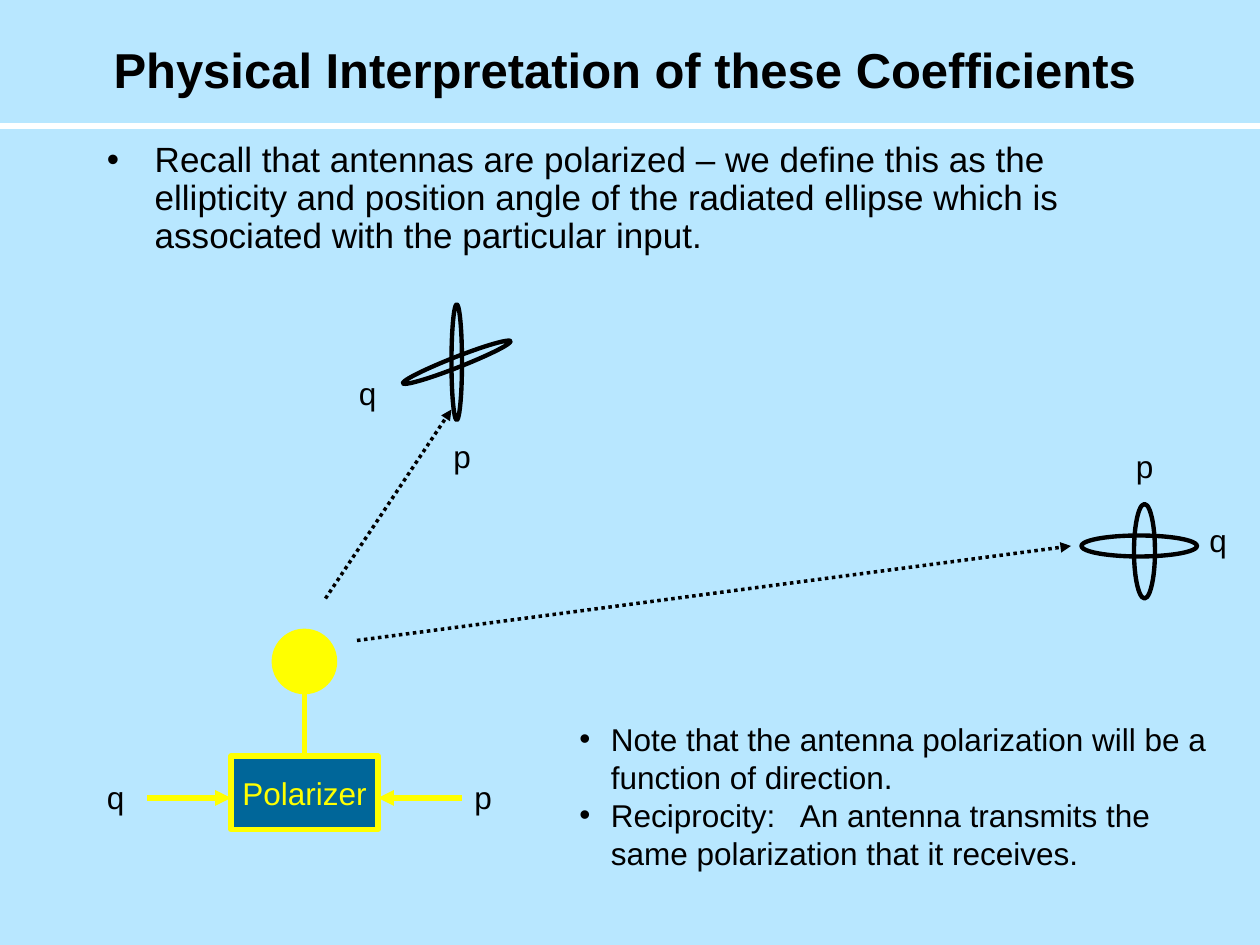
import pptx
import pptx.util
import pptx.dml.color
import pptx.enum.dml
import pptx.enum.shapes
import pptx.enum.text
import pptx.oxml.ns
import lxml.etree

HUE = {"sky": "B8E7FF", "white": "FFFFFF", "black": "000000",
       "sun": "FFFF00", "sea": "006699"}
FONT = "Arial"
WIDE, HIGH = 10, 7.5
COLS = 120
CELL = WIDE / COLS

TITLE = "Physical Interpretation of these Coefficients"
RECALL = ["Recall that antennas are polarized – we define this as the "
          "ellipticity and position angle of the radiated ellipse which is "
          "associated with the particular input."]
NOTES = ["Note that the antenna polarization will be a function of direction.",
         "Reciprocity:   An antenna transmits the same polarization that it receives."]
LABELS = [("q", 9, 73.5), ("p", 44, 73.5), ("p", 107, 42),
          ("p", 42, 41), ("q", 114, 49), ("q", 33, 35)]
RINGS = [((108, 48, 2, 9), 0), ((103, 51, 11, 2), 0),
         ((38, 34, 11, 1), 338.6), ((38, 34, 11, 1), 90)]
LINES = [((0, 12), (COLS, 12), "white", 3, None),
         ((29, 66), (29, 72), "sun", 3, None),
         ((36, 76), (44, 76), "sun", 3, "headEnd"),
         ((22, 76), (14, 76), "sun", 3, "headEnd"),
         ((34, 61), (102, 52), "black", 2, "tailEnd"),
         ((31, 57), (43, 39), "black", 2, "tailEnd")]

KIND = pptx.enum.shapes.MSO_SHAPE
SIDE = pptx.enum.text.PP_ALIGN
EDGE = pptx.enum.text.MSO_ANCHOR

deck = pptx.Presentation()
deck.slide_width = pptx.util.Inches(WIDE)
deck.slide_height = pptx.util.Inches(HIGH)
slide = deck.slides.add_slide(deck.slide_layouts[6])


def grid(*cells):
    return [pptx.util.Inches(n * CELL) for n in cells]


def tint(name):
    return pptx.dml.color.RGBColor.from_string(HUE[name])


def child(node, tag, **attrs):
    return lxml.etree.SubElement(node, pptx.oxml.ns.qn(tag), attrs)


def write(shape, text, size=18, hue="black", bold=False, side=SIDE.CENTER,
          edge=EDGE.TOP, wrap=False, dent=0, lead=None, gap=0):
    frame = shape.text_frame
    frame.word_wrap = wrap
    frame.vertical_anchor = edge
    items = [text] if isinstance(text, str) else text
    for i, item in enumerate(items):
        para = frame.paragraphs[0] if i == 0 else frame.add_paragraph()
        para.alignment = side
        para.space_before = pptx.util.Pt(gap)
        if lead:
            para.line_spacing = lead
        if dent:
            props = para._p.get_or_add_pPr()
            far = pptx.util.Inches(dent)
            props.set("marL", str(far))
            props.set("indent", str(-far))
            child(props, "a:buFont", typeface=FONT)
            child(props, "a:buChar", char="•")
        run = para.add_run()
        run.text = item
        run.font.name = FONT
        run.font.size = pptx.util.Pt(size)
        run.font.bold = bold
        run.font.color.rgb = tint(hue)


def box(*cells):
    return slide.shapes.add_textbox(*grid(*cells))


def draw(kind, cells, fill=None, line=None, width=1, turn=0):
    shape = slide.shapes.add_shape(kind, *grid(*cells))
    shape.shadow.inherit = False
    shape.rotation = turn
    for part, hue in ((shape.fill, fill), (shape.line.fill, line)):
        if hue:
            part.solid()
            part.fore_color.rgb = tint(hue)
        else:
            part.background()
    if line:
        shape.line.width = pptx.util.Pt(width)
    return shape


def join(start, end, hue, width, tip):
    link = slide.shapes.add_connector(
        pptx.enum.shapes.MSO_CONNECTOR.STRAIGHT, *grid(*start, *end))
    link.line.color.rgb = tint(hue)
    link.line.width = pptx.util.Pt(width)
    if tip == "tailEnd":
        link.line.dash_style = pptx.enum.dml.MSO_LINE.ROUND_DOT
    if tip:
        child(link.line._get_or_add_ln(), "a:" + tip, type="triangle")
    child(link._element.spPr, "a:effectLst")


back = slide.background.fill
back.solid()
back.fore_color.rgb = tint("sky")

write(box(9, 2, 101, 8), TITLE, size=28, bold=True, edge=EDGE.BOTTOM, wrap=True)
write(draw(KIND.RECTANGLE, (9, 13, 102, 15), fill="sky"), RECALL, size=20,
      side=SIDE.LEFT, wrap=True, dent=0.38, lead=0.9, gap=4)
draw(KIND.OVAL, (26, 60, 6, 6), fill="sun", line="sun", width=1.5)
write(draw(KIND.RECTANGLE, (22, 72, 14, 7), fill="sea", line="sun", width=3),
      "Polarizer", hue="sun", edge=EDGE.MIDDLE)
for item in LINES:
    join(*item)
for cells, turn in RINGS:
    draw(KIND.OVAL, cells, line="black", width=2.5, turn=turn)
write(box(54, 68, 63, 15.7), NOTES, side=SIDE.LEFT, wrap=True, dent=0.25)
for text, left, top in LABELS:
    write(box(left, top, 4, 4.8), text)

deck.save("out.pptx")
